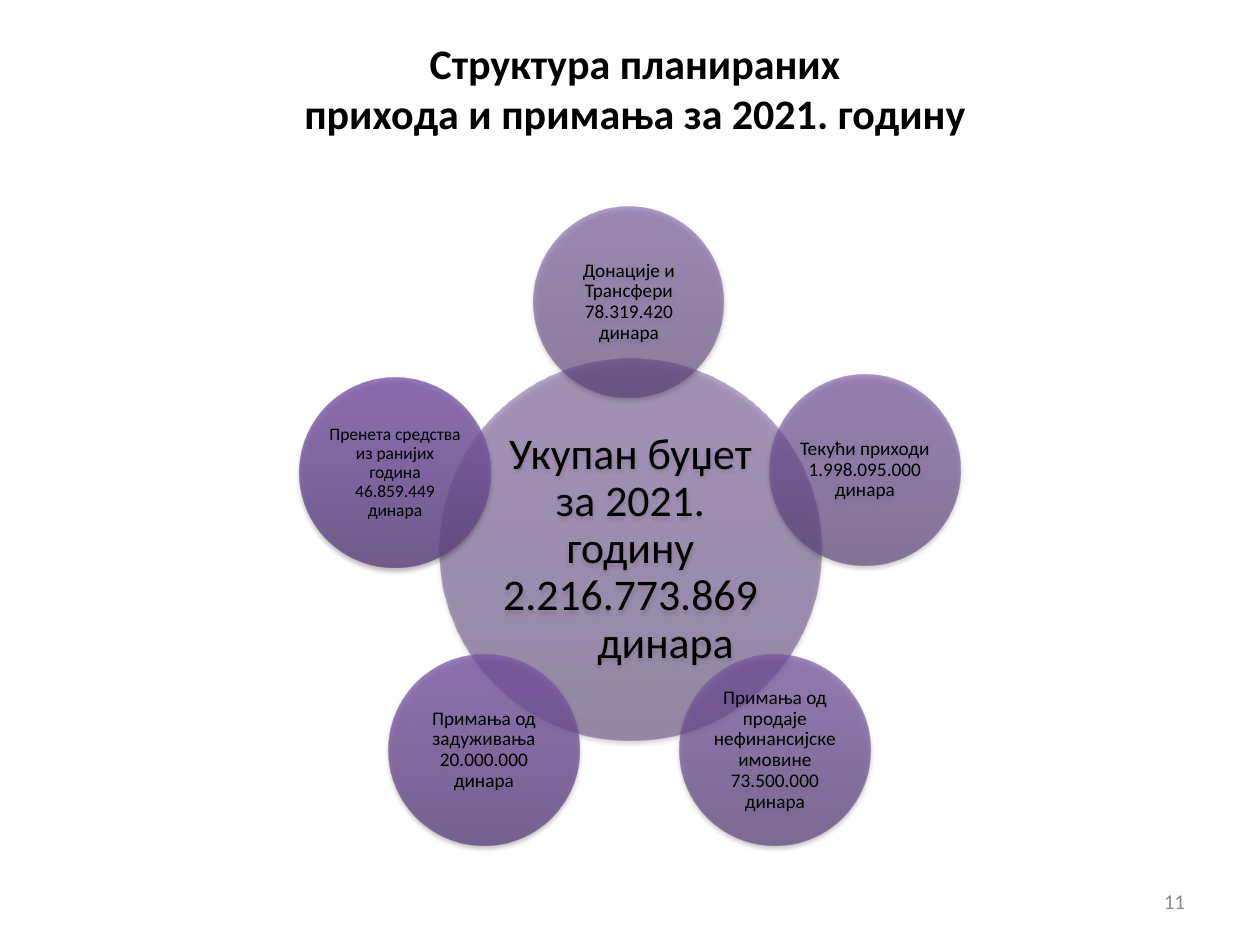
import pptx
import pptx.util
import pptx.dml.color
import pptx.enum.shapes
import pptx.enum.text
import pptx.oxml
import pptx.oxml.ns

PX = 914400 // 126
ALIGN = pptx.enum.text.PP_ALIGN
MIDDLE = pptx.enum.text.MSO_ANCHOR.MIDDLE


def color(value):
    return pptx.dml.color.RGBColor.from_string(value)


def write(frame, text, size, shade, inset, align, bold=False, spacing=1.0):
    frame_format = {"word_wrap": True, "vertical_anchor": MIDDLE}
    for side in ("left", "top", "right", "bottom"):
        frame_format["margin_" + side] = inset * PX
    for name, value in frame_format.items():
        setattr(frame, name, value)
    frame.text = text
    for para in frame.paragraphs:
        para.alignment = align
        para.line_spacing = spacing
        for span in para.runs:
            font_format = {"name": "Calibri", "size": pptx.util.Pt(size), "bold": bold}
            for name, value in font_format.items():
                setattr(span.font, name, value)
            span.font.color.rgb = color(shade)


deck = pptx.Presentation()
deck.slide_width = 1260 * PX
deck.slide_height = 945 * PX
page = deck.slides.add_slide(deck.slide_layouts[5])

title = page.shapes.title
for name, value in {"left": 68, "top": 34, "width": 1134, "height": 107}.items():
    setattr(title, name, value * PX)
write(title.text_frame, "Структура планираних\vприхода и примања за 2021. годину",
      24, "000000", 6, ALIGN.CENTER, bold=True)

number = page.shapes.add_textbox(903 * PX, 876 * PX, 294 * PX, 50 * PX)
write(number.text_frame, "11", 12, "8C8C8C", 12, ALIGN.RIGHT)

circles = [
    (440, 359, 381, 25, 4, 50, ("563D74", "705097", "704F99"),
     "Укупан буџет\vза 2021.\vгодину\v2.216.773.869\nдинара"),
    (534, 207, 190, 11, 2, 56, ("583E77", "72519A", "73509C"),
     "Донације и\vТрансфери\v78.319.420\vдинара"),
    (770, 375, 190, 11, 2, 62, ("5A407A", "75539E", "7551A0"),
     "Текући приходи\v1.998.095.000\vдинара"),
    (680, 655, 190, 11, 2, 68, ("5C417C", "7754A1", "7753A4"),
     "Примања од\vпродаје\vнефинансијске\vимовине\v73.500.000\vдинара"),
    (389, 655, 190, 11, 2, 74, ("5E427E", "7956A4", "7A55A6"),
     "Примања од\vзадуживања\v20.000.000\vдинара"),
    (300, 378, 190, 10, 1, 80, ("5F4580", "7C59A6", "7C58A8"),
     "Пренета средства\vиз ранијих\vгодина\v46.859.449\vдинара"),
]

namespace = pptx.oxml.ns.nsdecls("a")
for left, top, size, points, inset, opacity, shades, text in circles:
    circle = page.shapes.add_shape(
        pptx.enum.shapes.MSO_SHAPE.OVAL, left * PX, top * PX, size * PX, size * PX)
    circle.line.fill.background()
    stops = "".join(
        f'<a:gs pos="{place * 1000}"><a:srgbClr val="{shade}">'
        f'<a:alpha val="{opacity * 1000}"/></a:srgbClr></a:gs>'
        for place, shade in zip((0, 80, 100), shades))
    gradient = pptx.oxml.parse_xml(
        f'<a:gradFill {namespace} rotWithShape="1"><a:gsLst>{stops}</a:gsLst>'
        '<a:lin ang="16200000" scaled="0"/></a:gradFill>')
    circle.line._ln.addprevious(gradient)
    shadow = pptx.oxml.parse_xml(
        f'<a:effectLst {namespace}><a:outerShdw blurRad="39370" dist="22860" dir="5400000" '
        'rotWithShape="0"><a:srgbClr val="000000"><a:alpha val="35000"/></a:srgbClr>'
        '</a:outerShdw></a:effectLst>')
    circle.line._ln.addnext(shadow)
    write(circle.text_frame, text, points, "000000", inset, ALIGN.CENTER, spacing=0.9)

    if size == 381:
        circle.text_frame.paragraphs[-1]._p.get_or_add_pPr().set("marL", str(70 * PX))

deck.save("out.pptx")
